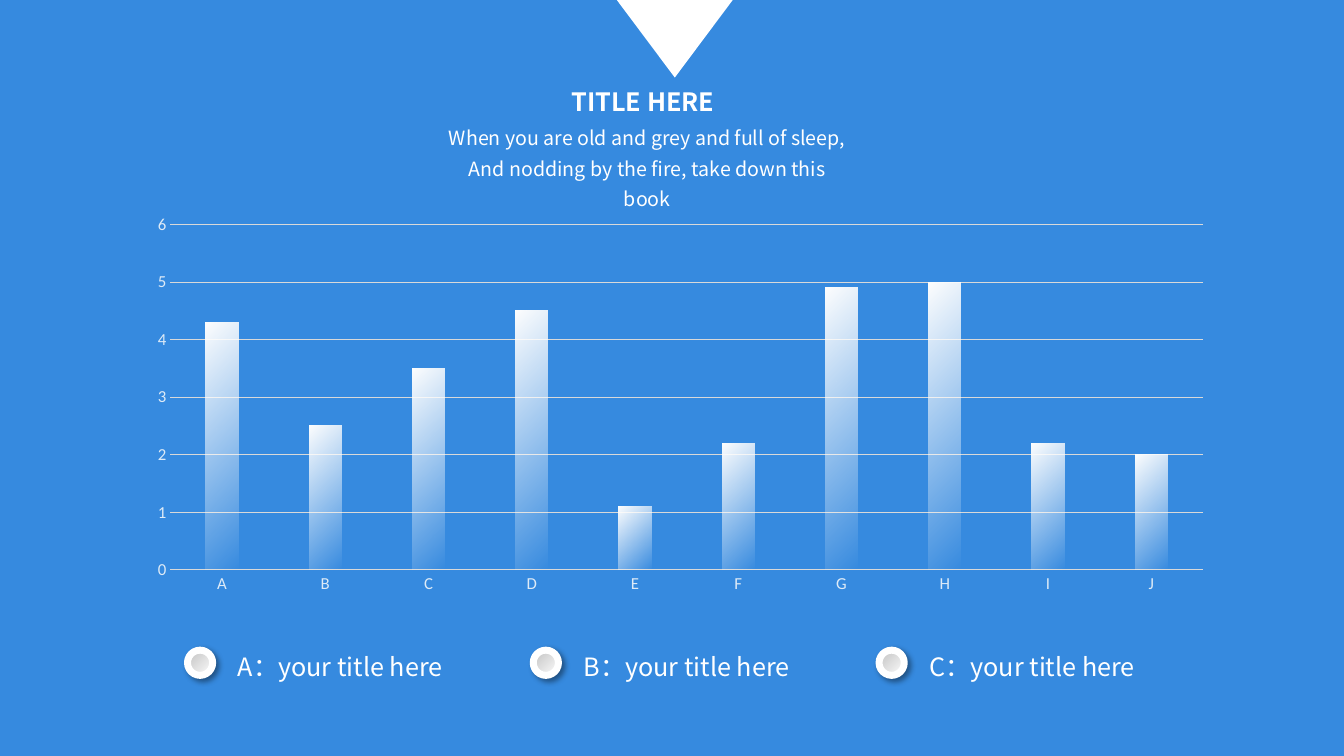
import pptx
import pptx.chart.data
import pptx.dml.color
import pptx.enum.chart
import pptx.enum.shapes
import pptx.enum.text
import pptx.oxml
import pptx.oxml.ns
import pptx.util
import lxml.etree
from dataclasses import dataclass

Pt = pptx.util.Pt
qn = pptx.oxml.ns.qn
Align = pptx.enum.text.PP_ALIGN
Shape = pptx.enum.shapes.MSO_SHAPE


def rgb(value: str) -> pptx.dml.color.RGBColor:
    return pptx.dml.color.RGBColor.from_string(value)


@dataclass(frozen=True)
class Theme:
    background: str = "368ADF"
    white: str = "FFFFFF"
    knob: str = "BFBFBF"
    shadow: str = "000000"
    grid: str = "D9D9D9"
    axis_text: str = "DEEBF7"
    text_font: str = "Noto Sans CJK SC"
    chart_font: str = "Calibri"
    heading_size: float = 18
    verse_size: float = 14
    axis_size: float = 12
    chart_size: float = 10


@dataclass(frozen=True)
class Box:
    left: float
    top: float
    width: float
    height: float

    def emu(self) -> tuple:
        return Pt(self.left), Pt(self.top), Pt(self.width), Pt(self.height)


@dataclass(frozen=True)
class Line:
    text: str
    right_indent: float = 0


THEME = Theme()
VERSE = [
    Line("When you are old and grey and full of sleep,", right_indent=35),
    Line("And nodding by the fire, take down this book"),
]
VALUES = dict(zip("ABCDEFGHIJ", (4.3, 2.5, 3.5, 4.5, 1.1, 2.2, 4.9, 5, 2.2, 2)))
LEGEND = ["A：your title here", "B：your title here", "C：your title here"]
LEGEND_LEFT, LEGEND_PITCH = 133.9, 247


def add_text(shapes, box: Box, lines: list, *, size: float, bold: bool = False,
             align=Align.LEFT, spacing: float = 1.0, inset: float = 7.2) -> None:
    frame = shapes.add_textbox(*box.emu()).text_frame
    frame.word_wrap = True
    frame.margin_left = Pt(inset)
    for index, line in enumerate(lines):
        paragraph = frame.add_paragraph() if index else frame.paragraphs[0]
        paragraph.alignment = align
        paragraph.line_spacing = spacing
        if line.right_indent:
            paragraph._p.get_or_add_pPr().set("marR", str(Pt(line.right_indent)))
        run = paragraph.add_run()
        run.text = line.text
        run.font.size = Pt(size)
        run.font.bold = bold
        run.font.name = THEME.text_font
        run.font.color.rgb = rgb(THEME.white)
        east_asian = lxml.etree.SubElement(run._r.get_or_add_rPr(), qn("a:ea"))
        east_asian.set("typeface", THEME.text_font)


def fill_diagonal(fill, start: str, end: str) -> None:
    fill.gradient()
    fill.gradient_angle = 315
    for stop, color, position in zip(fill.gradient_stops, (start, end), (0, 1)):
        stop.color.rgb = rgb(color)
        stop.position = position


def set_alpha(color_element, percent: int) -> None:
    lxml.etree.SubElement(color_element, qn("a:alpha")).set("val", str(percent * 1000))


def add_pointer(shapes) -> None:
    pointer = shapes.add_shape(Shape.ISOSCELES_TRIANGLE, *Box(440.6, 0, 82.8, 55.4).emu())
    pointer.rotation = 180
    pointer.shadow.inherit = False
    pointer.fill.solid()
    pointer.fill.fore_color.rgb = rgb(THEME.white)
    pointer.line.fill.background()


def style_axis(axis) -> None:
    axis.major_tick_mark = axis.minor_tick_mark = pptx.enum.chart.XL_TICK_MARK.NONE
    font = axis.tick_labels.font
    font.size = Pt(THEME.axis_size)
    font.name = THEME.chart_font
    font.color.rgb = rgb(THEME.axis_text)


def style_rule(line) -> None:
    line.color.rgb = rgb(THEME.grid)
    line.width = Pt(0.75)


def add_columns(shapes) -> None:
    data = pptx.chart.data.CategoryChartData()
    data.categories = list(VALUES)
    data.add_series("Series 1", list(VALUES.values()))
    chart = shapes.add_chart(pptx.enum.chart.XL_CHART_TYPE.COLUMN_CLUSTERED,
                             *Box(97.2, 147.6, 777.6, 282.2).emu(), data).chart
    chart.has_legend = False
    chart.has_title = False
    chart.font.size = Pt(THEME.chart_size)
    chart.font.name = THEME.chart_font
    chart.font.color.rgb = rgb(THEME.white)

    # Axes and gridlines
    style_axis(chart.category_axis)
    style_rule(chart.category_axis.format.line)
    scale = chart.value_axis
    style_axis(scale)
    scale.minimum_scale, scale.maximum_scale, scale.major_unit = 0, 6, 1
    scale.format.line.fill.background()
    scale.has_major_gridlines = True
    style_rule(scale.major_gridlines.format.line)

    # Columns that fade out towards the lower right
    plot = chart.plots[0]
    plot.vary_by_categories = False
    plot.gap_width = 219
    plot.overlap = -27
    series = plot.series[0]
    series.invert_if_negative = False
    fill_diagonal(series.format.fill, THEME.white, THEME.white)
    stop_colors = list(series._element.iter(qn("a:srgbClr")))
    set_alpha(stop_colors[-1], 0)


def add_knob(shapes, left: float) -> None:
    knob = shapes.add_shape(Shape.OVAL, *Box(left, 464.4, 18, 18).emu())
    fill_diagonal(knob.fill, THEME.knob, THEME.white)
    knob.line.color.rgb = rgb(THEME.white)
    knob.line.width = Pt(5)
    knob.shadow.inherit = False
    effects = knob._element.spPr.find(qn("a:effectLst"))
    shadow = lxml.etree.SubElement(effects, qn("a:outerShdw"))
    for name, value in (("blurRad", Pt(4)), ("dist", Pt(3)), ("dir", 45 * 60000),
                        ("algn", "tl"), ("rotWithShape", 0)):
        shadow.set(name, str(value))
    color = lxml.etree.SubElement(shadow, qn("a:srgbClr"))
    color.set("val", THEME.shadow)
    set_alpha(color, 40)


def main() -> None:
    deck = pptx.Presentation()
    deck.slide_width, deck.slide_height = Pt(960), Pt(540)
    slide = deck.slides.add_slide(deck.slide_layouts[6])
    slide.background.fill.solid()
    slide.background.fill.fore_color.rgb = rgb(THEME.background)

    # Heading
    add_pointer(slide.shapes)
    add_text(slide.shapes, Box(397.4, 58.3, 157, 29), [Line("TITLE HERE")],
             size=THEME.heading_size, bold=True, inset=10.8)
    add_text(slide.shapes, Box(312.5, 81.4, 334.8, 51), VERSE,
             size=THEME.verse_size, align=Align.CENTER, spacing=1.3)

    # Chart
    add_columns(slide.shapes)

    # Legend row
    for index, label in enumerate(LEGEND):
        left = LEGEND_LEFT + index * LEGEND_PITCH
        entry = slide.shapes.add_group_shape().shapes
        add_knob(entry, left)
        add_text(entry, Box(left + 28.8, 461.5, 174.2, 29), [Line(label)],
                 size=THEME.heading_size)

    deck.save("out.pptx")


if __name__ == "__main__":
    main()
